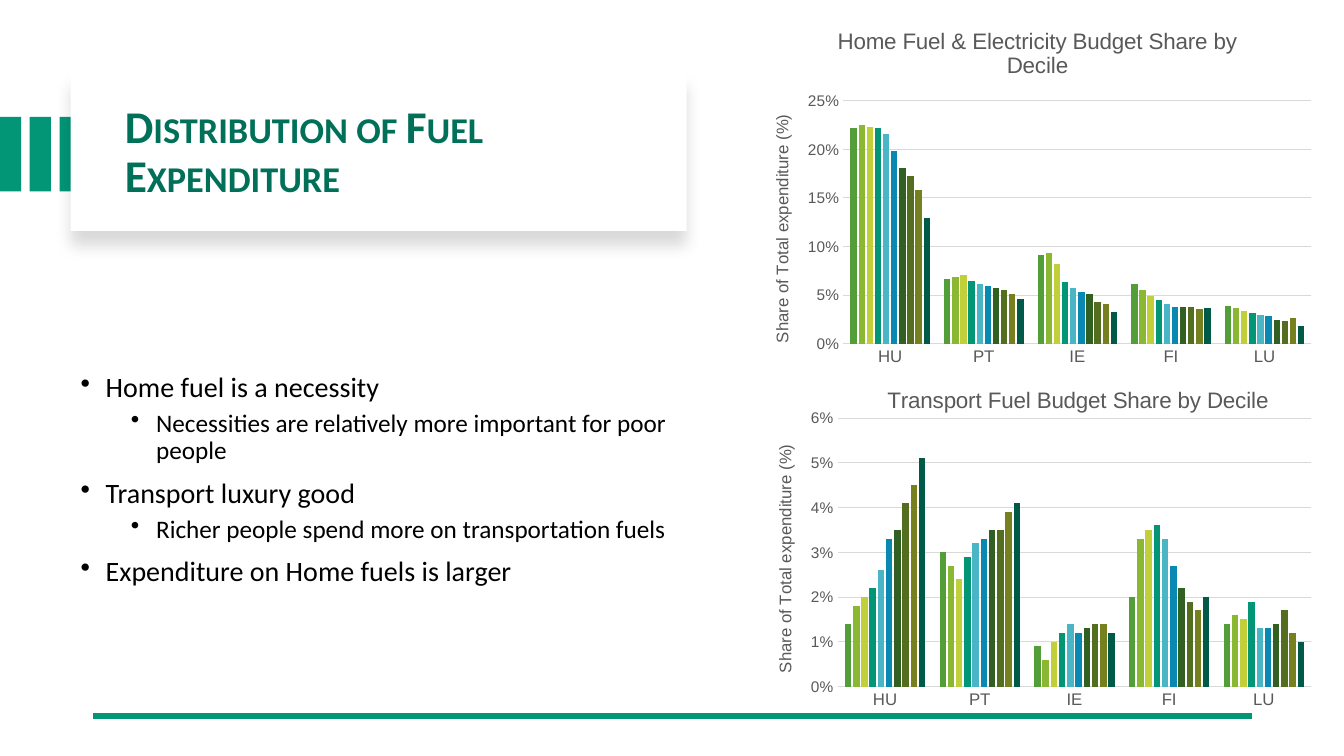
from lxml import etree
from pptx import Presentation
from pptx.chart.data import CategoryChartData
from pptx.dml.color import RGBColor
from pptx.enum.chart import XL_CHART_TYPE as ChartType, XL_TICK_MARK as Tick
from pptx.enum.shapes import MSO_CONNECTOR as Connector, MSO_SHAPE as Shape
from pptx.enum.text import MSO_ANCHOR as Anchor
from pptx.oxml import parse_xml
from pptx.oxml.ns import nsdecls, qn
from pptx.util import Inches, Pt

WIDTH, HEIGHT = 13.33, 7.5
COLORS = {
    "white": "FFFFFF", "black": "000000", "teal": "029676", "title": "017058",
    "gray": "595959", "grid": "D9D9D9",
}
DECILES = {
    f"Series {number}": shade for number, shade in enumerate(
        ["549E39", "8AB833", "C0CF3A", "029676", "4AB5C4",
         "0989B1", "325F22", "536E1F", "76801F", "015A47"], 1)
}
HOME_FUEL = {
    "HU": [0.222, 0.225, 0.223, 0.222, 0.216, 0.198, 0.181, 0.173, 0.158, 0.129],
    "PT": [0.067, 0.069, 0.071, 0.065, 0.062, 0.059, 0.057, 0.055, 0.051, 0.046],
    "IE": [0.091, 0.093, 0.082, 0.064, 0.057, 0.053, 0.051, 0.043, 0.041, 0.033],
    "FI": [0.062, 0.055, 0.049, 0.045, 0.041, 0.038, 0.038, 0.038, 0.036, 0.037],
    "LU": [0.039, 0.037, 0.034, 0.032, 0.03, 0.029, 0.024, 0.023, 0.027, 0.018],
}
TRANSPORT_FUEL = {
    "HU": [0.014, 0.018, 0.02, 0.022, 0.026, 0.033, 0.035, 0.041, 0.045, 0.051],
    "PT": [0.03, 0.027, 0.024, 0.029, 0.032, 0.033, 0.035, 0.035, 0.039, 0.041],
    "IE": [0.009, 0.006, 0.01, 0.012, 0.014, 0.012, 0.013, 0.014, 0.014, 0.012],
    "FI": [0.02, 0.033, 0.035, 0.036, 0.033, 0.027, 0.022, 0.019, 0.017, 0.02],
    "LU": [0.014, 0.016, 0.015, 0.019, 0.013, 0.013, 0.014, 0.017, 0.012, 0.01],
}
POINTS = [
    (0, "Home fuel is a necessity"),
    (1, "Necessities are relatively more important for poor people"),
    (0, "Transport luxury good"),
    (1, "Richer people spend more on transportation fuels"),
    (0, "Expenditure on Home fuels is larger"),
]


def rgb(name):
    return RGBColor.from_string(COLORS[name])


def style_font(font, size, color, name, bold=False):
    font.size, font.name, font.bold = Pt(size), name, bold
    font.color.rgb = rgb(color)


def add_rect(page, box, color):
    rect = page.shapes.add_shape(Shape.RECTANGLE, *map(Inches, box))
    rect.shadow.inherit = False
    rect.fill.solid()
    rect.fill.fore_color.rgb = rgb(color)
    rect.line.fill.background()
    return rect


def add_frame(page, box):
    frame = page.shapes.add_textbox(*map(Inches, box)).text_frame
    frame.word_wrap = True
    frame.vertical_anchor = Anchor.MIDDLE
    return frame


def add_stripes(page, box, count=3):
    left, top, width, height = box
    stripe = 0.21
    pitch = (width - stripe) / (count - 1)
    for index in range(count):
        add_rect(page, (left + index * pitch, top, stripe, height), "teal")


def add_title_card(page, box):
    left, top, width, height = box
    card = add_rect(page, box, "white")
    effects = card._element.spPr.find(qn("a:effectLst"))
    effects.append(parse_xml(
        f'<a:outerShdw {nsdecls("a")} blurRad="{Pt(11)}" dist="{Pt(10)}" dir="5400000" '
        f'algn="t" rotWithShape="0"><a:srgbClr val="{COLORS["black"]}">'
        '<a:alpha val="15000"/></a:srgbClr></a:outerShdw>'))
    frame = add_frame(page, (left + 0.44, top + 0.24, width - 0.32, height - 0.44))
    para = frame.paragraphs[0]
    para.text = "Distribution of Fuel Expenditure"
    para.line_spacing = 0.9
    style_font(para.font, 32.4, "title", "Calibri", bold=True)
    para._p.pPr.find(qn("a:defRPr")).set("cap", "small")


def add_bullets(page, box):
    frame = add_frame(page, box)
    for index, (level, text) in enumerate(POINTS):
        para = frame.add_paragraph() if index else frame.paragraphs[0]
        para.text, para.level, para.line_spacing = text, level, 0.9
        para.space_before = Pt((5 if level else 10) if index else 0)
        style_font(para.font, 18 if level else 20, "black", "Calibri")
        props = para._p.pPr
        props.set("marL", str(Inches(0.25 + 0.5 * level)))
        props.set("indent", str(Inches(-0.25)))
        bullet = parse_xml(f'<a:buChar {nsdecls("a")} char="•"/>')
        props.find(qn("a:defRPr")).addprevious(bullet)


def set_layout(parent, after, **values):
    for old in parent.findall(qn("c:layout")):
        parent.remove(old)
    layout = etree.Element(qn("c:layout"))
    manual = etree.SubElement(layout, qn("c:manualLayout"))
    for key, value in values.items():
        etree.SubElement(manual, qn(f"c:{key}")).set("val", str(value))
    if after is None:
        parent.insert(0, layout)
    else:
        after.addnext(layout)


def add_title(owner, text, size):
    owner.has_title = True
    title = (owner.chart_title if hasattr(owner, "chart_title") else owner.axis_title)
    para = title.text_frame.paragraphs[0]
    para.text = text
    style_font(para.font, size, "gray", "Arial")
    return title


def add_budget_chart(page, box, heading, shares, top, step, plot, title_at=None):
    data = CategoryChartData(number_format="0%")
    data.categories = list(shares)
    for name, values in zip(DECILES, zip(*shares.values())):
        data.add_series(name, values)
    chart = page.shapes.add_chart(ChartType.COLUMN_CLUSTERED, *map(Inches, box), data).chart
    style_font(chart.font, 10, "black", "Arial")
    chart.has_legend = False

    title = add_title(chart, heading, 16)
    title.include_in_layout = False
    if title_at:
        x, y = title_at
        element = title._element
        set_layout(element, element.find(qn("c:tx")), xMode="edge", yMode="edge", x=x, y=y)
    x, y, w, h = plot
    set_layout(chart._chartSpace.chart.plotArea, None, layoutTarget="inner",
               xMode="edge", yMode="edge", x=x, y=y, w=w, h=h)

    columns = chart.plots[0]
    columns.gap_width, columns.overlap, columns.vary_by_categories = 219, -27, False
    for series, shade in zip(columns.series, DECILES.values()):
        series.format.fill.solid()
        series.format.fill.fore_color.rgb = RGBColor.from_string(shade)

    countries, percent = chart.category_axis, chart.value_axis
    for axis, size in ((countries, 12), (percent, 11)):
        axis.major_tick_mark = axis.minor_tick_mark = Tick.NONE
        style_font(axis.tick_labels.font, size, "gray", "Arial")
    percent.minimum_scale, percent.maximum_scale, percent.major_unit = 0, top, step
    percent.tick_labels.number_format = "0%"
    percent.tick_labels.number_format_is_linked = False
    percent.format.line.fill.background()
    for line in (countries.format.line, percent.major_gridlines.format.line):
        line.color.rgb, line.width = rgb("grid"), Pt(0.75)
    add_title(percent, "Share of Total expenditure (%)", 12)


def add_footer_line(page, left, right, y):
    line = page.shapes.add_connector(Connector.STRAIGHT, *map(Inches, (right, y, left, y)))
    line.line.color.rgb, line.line.width = rgb("teal"), Pt(4.5)
    etree.SubElement(line._element.spPr, qn("a:effectLst"))


def main():
    deck = Presentation()
    deck.slide_width, deck.slide_height = Inches(WIDTH), Inches(HEIGHT)
    page = deck.slides.add_slide(deck.slide_layouts[6])
    left, column = 0.7, 6.11
    add_stripes(page, (0, 1.16, 0.8, 0.74))
    add_title_card(page, (left, 0.72, column, 1.57))
    add_bullets(page, (left, 2.76, column, 4.02))
    add_footer_line(page, 0.92, 12.42, 7.1)
    chart_left, chart_width, chart_height = 7.46, 5.66, 3.6
    add_budget_chart(page, (chart_left, 0.1, chart_width, chart_height),
                     "Home Fuel & Electricity Budget Share by Decile", HOME_FUEL,
                     0.25, 0.05, (0.16, 0.25, 0.82, 0.67))
    add_budget_chart(page, (chart_left, 3.5, chart_width, chart_height),
                     "Transport Fuel Budget Share by Decile", TRANSPORT_FUEL,
                     0.06, 0.01, (0.15, 0.18, 0.83, 0.74), (0.23, 0.08))
    deck.save("out.pptx")


if __name__ == "__main__":
    main()
